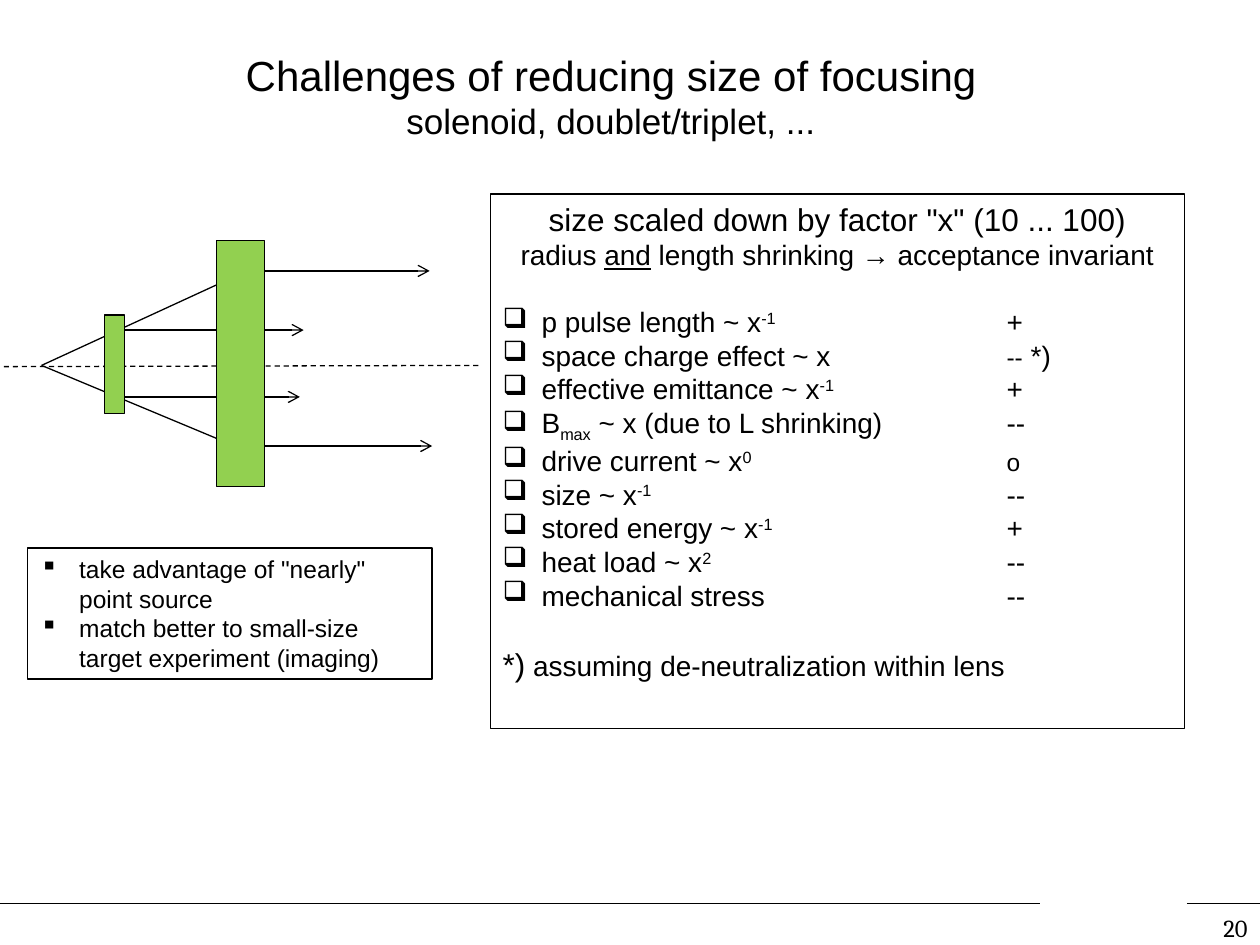
from typing import NamedTuple

from lxml import etree
from pptx import Presentation
from pptx.dml.color import RGBColor
from pptx.enum import dml, shapes, text
from pptx.oxml import ns
from pptx.util import Inches, Pt

BLACK = RGBColor(0x00, 0x00, 0x00)
LENS_GREEN = RGBColor(0x92, 0xD0, 0x50)
LINE_WIDTH = Pt(0.75)
BULLET_INDENT = Inches(0.31)
SIGN_TAB = Inches(4)
SUPERSCRIPT, SUBSCRIPT = 30000, -25000


class Line(NamedTuple):
    x1: float
    y1: float
    x2: float
    y2: float
    arrow: bool = False
    dashed: bool = False


class Lens(NamedTuple):
    left: float
    top: float
    width: float
    height: float


class Effect(NamedTuple):
    """One scaling law; shifted is raised or lowered text after the name."""
    name: str
    shifted: str
    rest: str
    sign: str
    baseline: int = SUPERSCRIPT
    sign_size: int = 16
    note: str = ""


FOOTER_RULES = [Line(0, 7.17, 8.25, 7.17), Line(9.42, 7.17, 10, 7.17)]
RAYS = [
    Line(0.03, 2.91, 3.82, 2.9, dashed=True),
    Line(0.33, 2.9, 1.96, 3.58),
    Line(0.33, 2.9, 1.96, 2.15),
    Line(1.9, 2.15, 3.41, 2.15, arrow=True),
    Line(0.88, 3.15, 2.38, 3.15, arrow=True),
    Line(0.91, 2.62, 2.41, 2.62, arrow=True),
    Line(1.93, 3.54, 3.43, 3.54, arrow=True),
]
LENSES = [Lens(1.72, 1.91, 0.38, 1.95), Lens(0.83, 2.5, 0.16, 0.78)]
EFFECTS = [
    Effect("p pulse length ~ x", "-1", "", "+"),
    Effect("space charge effect ~ x", "", "", "--", sign_size=14, note=" *)"),
    Effect("effective emittance ~ x", "-1", "", "+"),
    Effect("B", "max", " ~ x (due to L shrinking)", "--", baseline=SUBSCRIPT),
    Effect("drive current ~ x", "0", "", "o", sign_size=14),
    Effect("size ~ x", "-1", "", "--"),
    Effect("stored energy ~ x", "-1", "", "+"),
    Effect("heat load ~ x", "2", "", "--"),
    Effect("mechanical stress", "", "", "--"),
]
ADVANTAGES = [
    'take advantage of "nearly" point source',
    "match better to small-size target experiment (imaging)",
]


def add_line(page, line: Line) -> None:
    connector = page.shapes.add_connector(
        shapes.MSO_CONNECTOR.STRAIGHT, Inches(line.x1), Inches(line.y1),
        Inches(line.x2), Inches(line.y2))
    connector.line.color.rgb = BLACK
    connector.line.width = LINE_WIDTH
    if line.dashed:
        connector.line.dash_style = dml.MSO_LINE.DASH
    if line.arrow:
        outline = connector.line._get_or_add_ln()
        etree.SubElement(outline, ns.qn("a:tailEnd"), type="arrow")
    etree.SubElement(connector._element.spPr, ns.qn("a:effectLst"))


def add_rectangle(page, left: float, top: float, width: float, height: float,
                  fill: RGBColor | None = None):
    box = page.shapes.add_shape(
        shapes.MSO_SHAPE.RECTANGLE, Inches(left), Inches(top),
        Inches(width), Inches(height))
    box.shadow.inherit = False
    if fill is None:
        box.fill.background()
    else:
        box.fill.solid()
        box.fill.fore_color.rgb = fill
    box.line.color.rgb = BLACK
    box.line.width = LINE_WIDTH
    box.text_frame.vertical_anchor = text.MSO_ANCHOR.TOP
    return box


def next_paragraph(frame):
    """Return the untouched first paragraph, or a new one."""
    first = frame.paragraphs[0]
    return frame.add_paragraph() if first.runs else first


def add_span(para, words: str):
    span = para.add_run()
    span.text = words
    return span


def format_paragraph(para, size: float, align=text.PP_ALIGN.LEFT,
                     font: str = "Arial") -> None:
    para.alignment = align
    para.font.name = font
    para.font.size = Pt(size)
    para.font.color.rgb = BLACK


def add_bullet(para, char: str, tab: int | None = None) -> None:
    properties = para._p.get_or_add_pPr()
    properties.set("marL", str(BULLET_INDENT))
    properties.set("indent", str(-BULLET_INDENT))
    etree.SubElement(properties, ns.qn("a:buChar"), char=char)
    if tab is not None:
        tabs = etree.SubElement(properties, ns.qn("a:tabLst"))
        etree.SubElement(tabs, ns.qn("a:tab"), pos=str(tab), algn="l")


def add_effect(frame, effect: Effect) -> None:
    para = next_paragraph(frame)
    add_bullet(para, "❑", SIGN_TAB)
    format_paragraph(para, 16)
    add_span(para, effect.name)
    if effect.shifted:
        shifted = add_span(para, effect.shifted)
        shifted.font._element.set("baseline", str(effect.baseline))
    add_span(para, effect.rest + "\t")
    sign = add_span(para, effect.sign)
    if effect.sign_size != 16:
        sign.font.size = Pt(effect.sign_size)
    if effect.note:
        add_span(para, effect.note)


def add_title(page) -> None:
    title = page.shapes.title
    title.left, title.top = Inches(1.82), Inches(0.34)
    title.width, title.height = Inches(6.06), Inches(0.84)
    frame = title.text_frame
    frame.auto_size = text.MSO_AUTO_SIZE.NONE
    frame.word_wrap = False
    frame.vertical_anchor = text.MSO_ANCHOR.TOP
    for words, size in [("Challenges of reducing size of focusing", 24),
                        ("solenoid, doublet/triplet, ...", 20)]:
        para = next_paragraph(frame)
        add_span(para, words)
        format_paragraph(para, size, text.PP_ALIGN.CENTER)


def add_scaling_box(page) -> None:
    frame = add_rectangle(page, 3.89, 1.54, 5.51, 4.24).text_frame
    heading = next_paragraph(frame)
    add_span(heading, 'size scaled down by factor "x" (10 ... 100)')
    format_paragraph(heading, 18, text.PP_ALIGN.CENTER)
    subheading = next_paragraph(frame)
    add_span(subheading, "radius ")
    add_span(subheading, "and").font.underline = True
    add_span(subheading, " length shrinking → acceptance invariant")
    format_paragraph(subheading, 16, text.PP_ALIGN.CENTER)
    subheading.space_after = Pt(19)
    for effect in EFFECTS:
        add_effect(frame, effect)
    footnote = next_paragraph(frame)
    footnote.space_before = Pt(19)
    format_paragraph(footnote, 16)
    add_span(footnote, "*)").font.size = Pt(18)
    add_span(footnote, " assuming de-neutralization within lens")


def add_advantages_box(page) -> None:
    frame = add_rectangle(page, 0.22, 4.35, 3.21, 1.04).text_frame
    for words in ADVANTAGES:
        para = next_paragraph(frame)
        add_bullet(para, "▪")
        add_span(para, words)
        format_paragraph(para, 14)


def add_page_number(page) -> None:
    box = page.shapes.add_textbox(
        Inches(8.99), Inches(7.2), Inches(1.01), Inches(0.3))
    box.text_frame.word_wrap = True
    para = next_paragraph(box.text_frame)
    add_span(para, "20")
    format_paragraph(para, 14, text.PP_ALIGN.RIGHT, "Cambria")


def main() -> None:
    deck = Presentation()
    deck.slide_width, deck.slide_height = Inches(10), Inches(7.5)
    page = deck.slides.add_slide(deck.slide_layouts[5])
    add_title(page)
    add_scaling_box(page)
    for line in FOOTER_RULES + RAYS:
        add_line(page, line)
    for lens in LENSES:
        add_rectangle(page, *lens, fill=LENS_GREEN)
    add_advantages_box(page)
    add_page_number(page)
    deck.save("out.pptx")


if __name__ == "__main__":
    main()
